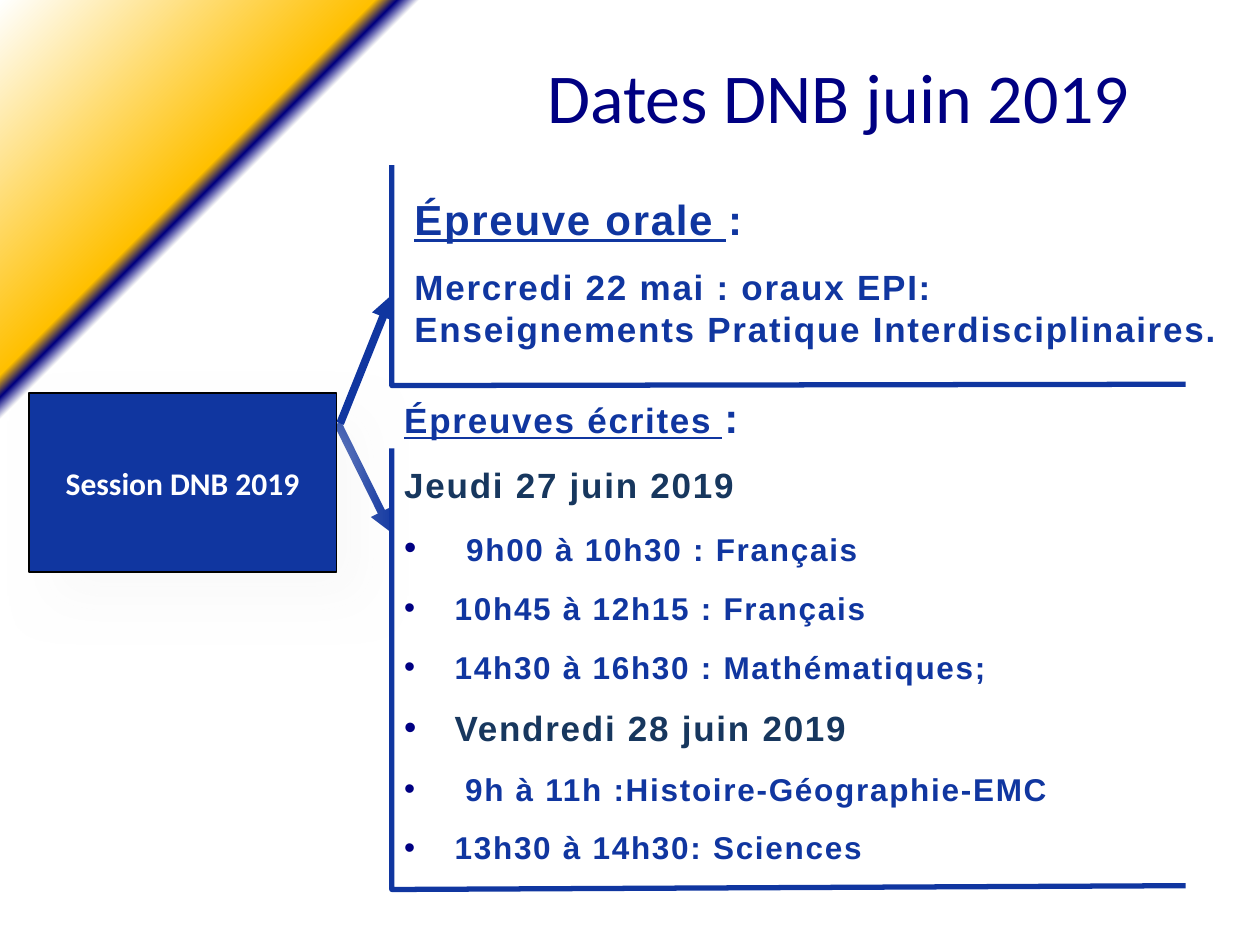
from dataclasses import dataclass

from lxml.etree import SubElement
from pptx import Presentation
from pptx.dml.color import RGBColor
from pptx.enum.shapes import MSO_CONNECTOR, MSO_SHAPE
from pptx.enum.text import MSO_ANCHOR, PP_ALIGN
from pptx.oxml import parse_xml
from pptx.oxml.ns import nsdecls, qn
from pptx.util import Inches, Pt


@dataclass(frozen=True)
class Theme:
    blue: str = "1036A0"
    navy: str = "000082"
    day: str = "17375E"
    gold: str = "FFC000"
    white: str = "FFFFFF"
    black: str = "000000"
    shade: str = "F2F2F2"
    heading_font: str = "Calibri"
    body_font: str = "Arial"
    title: int = 40
    large: int = 24
    medium: int = 20
    small: int = 18


THEME = Theme()


def rgb(value):
    return RGBColor.from_string(value)


def set_background(slide):
    """Diagonal band running across the top left corner."""
    slide.background.fill.gradient()
    gradient = slide.background._cSld.find(".//" + qn("a:gradFill"))
    for child in list(gradient):
        gradient.remove(child)
    stops = SubElement(gradient, qn("a:gsLst"))
    for position, color in ((0, THEME.white), (81, THEME.white), (82, THEME.navy),
                            (83, THEME.gold), (100, THEME.white)):
        stop = SubElement(stops, qn("a:gs"), pos=str(position * 1000))
        SubElement(stop, qn("a:srgbClr"), val=color)
    SubElement(gradient, qn("a:lin"), ang=str(225 * 60000), scaled="0")


def add_run(paragraph, text, size, color, font=THEME.body_font, underline=False, spacing=100):
    run = paragraph.add_run()
    run.text = text
    run.font.size = Pt(size)
    run.font.name = font
    run.font.color.rgb = rgb(color)
    run.font.bold = font == THEME.body_font
    run.font.underline = underline
    if spacing:
        run._r.get_or_add_rPr().set("spc", str(spacing))
    return run


def add_text_frame(slide, left, top, width, height):
    frame = slide.shapes.add_textbox(
        Inches(left), Inches(top), Inches(width), Inches(height)).text_frame
    frame.word_wrap = True
    return frame


def next_paragraph(frame):
    first = frame.paragraphs[0]
    paragraph = frame.add_paragraph() if first.runs else first
    paragraph.space_after = Pt(12)
    return paragraph


def add_bullet(paragraph):
    properties = paragraph._p.get_or_add_pPr()
    indent = Inches(0.4)
    properties.set("marL", str(indent))
    properties.set("indent", str(-indent))
    bullet_color = SubElement(properties, qn("a:buClr"))
    SubElement(bullet_color, qn("a:srgbClr"), val=THEME.navy)
    SubElement(properties, qn("a:buFont"), typeface=THEME.body_font)
    SubElement(properties, qn("a:buChar"), char="•")
    tabs = SubElement(properties, qn("a:tabLst"))
    SubElement(tabs, qn("a:tab"), pos=str(Inches(3.34)), algn="l")


def add_arrow(slide, start, end):
    arrow = slide.shapes.add_connector(
        MSO_CONNECTOR.STRAIGHT, *(Inches(value) for value in (*start, *end)))
    arrow.line.color.rgb = rgb(THEME.blue)
    arrow.line.width = Pt(4.5)
    SubElement(arrow.line._get_or_add_ln(), qn("a:tailEnd"), type="triangle")
    SubElement(arrow._element.spPr, qn("a:effectLst"))


def add_bracket(slide, left, top, width, height, rise):
    """Left and bottom edges of a section, the bottom rising slightly."""
    bottom = top + height
    builder = slide.shapes.build_freeform(Inches(left), Inches(top), scale=1.0)
    builder.add_line_segments(
        [(Inches(left), Inches(bottom)), (Inches(left + width), Inches(bottom - rise))],
        close=False)
    bracket = builder.convert_to_shape()
    bracket.fill.background()
    bracket.line.color.rgb = rgb(THEME.blue)
    bracket.line.width = Pt(3)
    bracket.shadow.inherit = False


def add_title(slide, left, top, width, height):
    frame = add_text_frame(slide, left, top, width, height)
    frame.vertical_anchor = MSO_ANCHOR.MIDDLE
    heading = frame.paragraphs[0]
    heading.alignment = PP_ALIGN.CENTER
    add_run(heading, "Dates DNB juin 2019", THEME.title, THEME.navy,
            THEME.heading_font, spacing=0)


def add_session(slide, left, top, width, height):
    session = slide.shapes.add_shape(
        MSO_SHAPE.RECTANGLE, Inches(left), Inches(top), Inches(width), Inches(height))
    session.fill.solid()
    session.fill.fore_color.rgb = rgb(THEME.blue)
    session.line.color.rgb = rgb(THEME.black)
    session.line.width = Pt(0.75)
    session._element.spPr.append(parse_xml(
        f'<a:effectLst {nsdecls("a")}><a:outerShdw blurRad="{Pt(29)}" dist="{Pt(20)}" '
        f'dir="2700000" algn="tl" rotWithShape="0"><a:srgbClr val="{THEME.shade}">'
        '<a:alpha val="40000"/></a:srgbClr></a:outerShdw></a:effectLst>'))
    frame = session.text_frame
    frame.word_wrap = False
    frame.vertical_anchor = MSO_ANCHOR.MIDDLE
    label = frame.paragraphs[0]
    label.alignment = PP_ALIGN.CENTER
    add_run(label, "Session DNB 2019", THEME.small, THEME.white,
            THEME.heading_font, spacing=0).font.bold = True


def add_section_heading(frame, text, size):
    heading = next_paragraph(frame)
    add_run(heading, text, size, THEME.blue, underline=True)
    add_run(heading, ":", THEME.large, THEME.blue)


def add_written_exams(slide, left, top, width, height):
    frame = add_text_frame(slide, left, top, width, height)
    add_section_heading(frame, "Épreuves écrites ", THEME.medium)
    add_run(next_paragraph(frame), "Jeudi 27 juin 2019", THEME.medium, THEME.day)
    day, exam = (THEME.medium, THEME.day), (THEME.small, THEME.blue)
    # Each entry: size of its leading space if any, text, style
    schedule = (
        (THEME.medium, "9h00 à 10h30 : Français", exam),
        (None, "10h45 à 12h15 : Français", exam),
        (None, "14h30 à 16h30 : Mathématiques;", exam),
        (None, "Vendredi 28 juin 2019", day),
        (THEME.small, "9h à 11h :Histoire-Géographie-EMC", exam),
        (None, "13h30 à 14h30: Sciences", exam),
    )
    for space_size, text, style in schedule:
        entry = next_paragraph(frame)
        add_bullet(entry)
        if space_size:
            add_run(entry, " ", space_size, THEME.day)
        add_run(entry, text, *style)


def add_oral_exam(slide, left, top, width, height):
    frame = add_text_frame(slide, left, top, width, height)
    add_section_heading(frame, "Épreuve orale ", THEME.large)
    add_run(next_paragraph(frame),
            "Mercredi 22 mai : oraux EPI: Enseignements Pratique Interdisciplinaires.",
            THEME.medium, THEME.blue)


def main():
    deck = Presentation()
    deck.slide_width, deck.slide_height = Inches(10), Inches(7.5)
    slide = deck.slides.add_slide(deck.slide_layouts[6])
    set_background(slide)
    # The lower arrow lies under the shadow of the session box
    add_arrow(slide, (2.68, 3.36), (3.11, 4.23))
    add_title(slide, 3.31, 0.13, 6.69, 1.25)
    add_session(slide, 0.23, 3.12, 2.44, 1.42)
    # Written exams
    add_written_exams(slide, 3.11, 3.06, 6.69, 3.9)
    add_bracket(slide, 3.11, 3.56, 6.3, 3.5, rise=0.03)
    # Oral exam
    add_oral_exam(slide, 3.19, 1.49, 6.61, 1.35)
    add_bracket(slide, 3.11, 1.31, 6.3, 1.75, rise=0.01)
    add_arrow(slide, (2.7, 3.36), (3.11, 2.34))
    deck.save("out.pptx")


if __name__ == "__main__":
    main()
